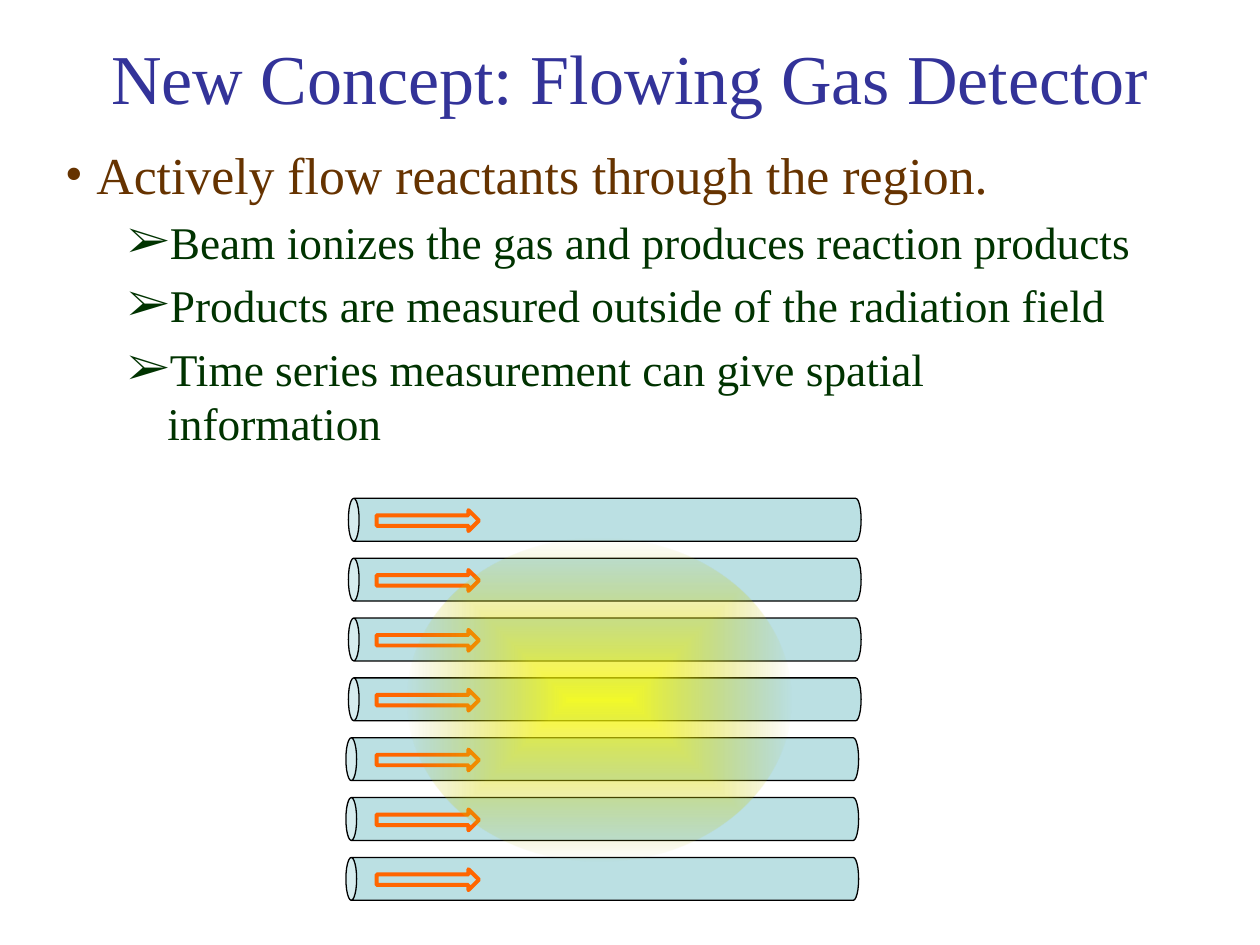
from lxml import etree
from pptx import Presentation
from pptx.dml.color import RGBColor
from pptx.enum import shapes, text
from pptx.oxml import parse_xml
from pptx.oxml.ns import nsdecls, qn
from pptx.util import Pt

COLORS = {"title": "333399", "point": "663300", "detail": "003300", "tube": "BBE0E3",
          "outline": "000000", "flow": "FF6600", "beam": "FFFF00", "beam_edge": "B6B600"}
FONT = "Times New Roman"


def add_words(paragraph, words, size, color):
    run = paragraph.add_run()
    run.text = words
    for key, value in {"name": FONT, "size": Pt(size)}.items():
        setattr(run.font, key, value)
    run.font.color.rgb = RGBColor.from_string(COLORS[color])


def add_part(kind, left, top, width, height, line_color, line_width):
    part = slide.shapes.add_shape(kind, Pt(left), Pt(top), Pt(width), Pt(height))
    part.shadow.inherit = False
    part.fill.solid()
    part.fill.fore_color.rgb = RGBColor.from_string(COLORS["tube"])
    part.line.color.rgb = RGBColor.from_string(COLORS[line_color])
    part.line.width = Pt(line_width)
    return part


prs = Presentation()
prs.slide_width, prs.slide_height = Pt(720), Pt(540)
slide = prs.slides.add_slide(prs.slide_layouts[6])

title = slide.shapes.add_textbox(Pt(36), Pt(12.25), Pt(648), Pt(62.5)).text_frame
for key, value in {"word_wrap": True, "vertical_anchor": text.MSO_ANCHOR.MIDDLE}.items():
    setattr(title, key, value)
title.paragraphs[0].alignment = text.PP_ALIGN.CENTER
add_words(title.paragraphs[0], "New Concept: Flowing Gas Detector", 40, "title")

body = slide.shapes.add_textbox(Pt(30), Pt(78), Pt(624), Pt(204)).text_frame
body.word_wrap = True
levels = [
    {"bullet": "•", "margin": 18, "hang": 18, "size": 29.6, "color": "point"},
    {"bullet": "➢", "margin": 58.5, "hang": 22.5, "size": 25.9, "color": "detail"},
]
points = [
    (0, "Actively flow reactants through the region."),
    (1, "Beam ionizes the gas and produces reaction products"),
    (1, "Products are measured outside of the radiation field"),
    (1, "Time series measurement can give spatial information"),
]
for i, (depth, words) in enumerate(points):
    level = levels[depth]
    point = body.add_paragraph() if i else body.paragraphs[0]
    point.level = depth
    if i:
        point.space_before = Pt(5.2)
    props = point._p.get_or_add_pPr()
    props.set("marL", str(Pt(level["margin"])))
    props.set("indent", str(-Pt(level["hang"])))
    etree.SubElement(props, qn("a:buFont")).set("typeface", FONT)
    etree.SubElement(props, qn("a:buChar")).set("char", level["bullet"])
    add_words(point, words, level["size"], level["color"])

ROWS, PITCH, FIRST_CENTER = 7, 34.2, 297
TUBE_WIDTH, TUBE_LENGTH = 24.5, 293
centers = [FIRST_CENTER + PITCH * row for row in range(ROWS)]
for row, center in enumerate(centers):
    middle = 345.6 if row < 4 else 344.2
    tube = add_part(shapes.MSO_SHAPE.CAN, middle - TUBE_WIDTH / 2, center - TUBE_LENGTH / 2,
                    TUBE_WIDTH, TUBE_LENGTH, "outline", 0.75)
    tube.rotation = 270

for center in centers:
    flow = add_part(shapes.MSO_SHAPE.RIGHT_ARROW, 215.2, center - 5.5, 58.5, 12, "flow", 2.25)
    etree.SubElement(flow.line._get_or_add_ln(), qn("a:round"))

beam = add_part(shapes.MSO_SHAPE.OVAL, 232.5, 307.5, 219.5, 185, "outline", 0.75)
beam.line.fill.background()
solid = beam._element.spPr.find(qn("a:solidFill"))
gradient = parse_xml(
    f'<a:gradFill {nsdecls("a")} rotWithShape="1"><a:gsLst>'
    f'<a:gs pos="0"><a:srgbClr val="{COLORS["beam"]}"><a:alpha val="81000"/></a:srgbClr></a:gs>'
    f'<a:gs pos="100000"><a:srgbClr val="{COLORS["beam_edge"]}"><a:alpha val="0"/></a:srgbClr></a:gs>'
    '</a:gsLst><a:path path="shape"><a:fillToRect l="50000" t="50000" r="50000" b="50000"/></a:path>'
    '</a:gradFill>')
solid.getparent().replace(solid, gradient)

prs.save("out.pptx")
